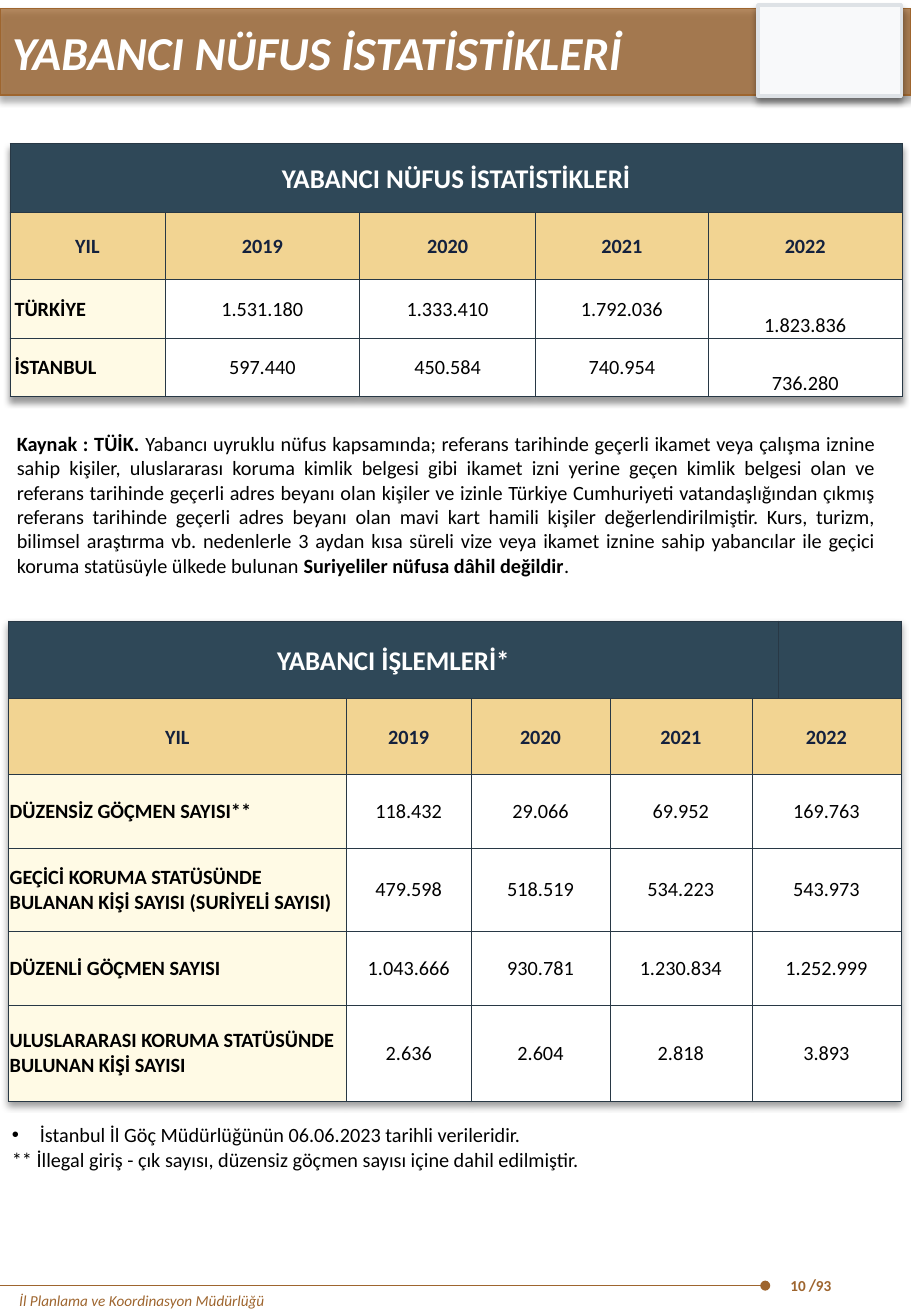
from lxml import etree
from pptx import Presentation, util as u
from pptx.dml.color import RGBColor
from pptx.enum import shapes, text
from pptx.oxml import parse_xml
from pptx.oxml.ns import nsdecls, qn

COLORS = {
    "brown": "9E652E", "navy": "2F4858", "sand": "F2D492", "cream": "FFFAE5",
    "white": "FFFFFF", "black": "000000", "ink": "14213D", "grid": "283845",
    "panel": "F8F9FA", "panel_edge": "DEE2E6",
}
FONT = "Calibri"
PX = u.Inches(1) // 100
ALIGN = {"l": text.PP_ALIGN.LEFT, "c": text.PP_ALIGN.CENTER, "j": text.PP_ALIGN.JUSTIFY}
MIDDLE, BOTTOM = text.MSO_ANCHOR.MIDDLE, text.MSO_ANCHOR.BOTTOM
WIDE_INSET, THIN_INSET = (4, 0, 4, 0), (1, 1, 1, 0)
SHADOW = (
    f'<a:effectLst {nsdecls("a")}><a:outerShdw blurRad="50800" dist="38100" dir="5400000" '
    'algn="t" rotWithShape="0"><a:srgbClr val="000000"><a:alpha val="40000"/></a:srgbClr>'
    '</a:outerShdw></a:effectLst>')


def rgb(name):
    return RGBColor.from_string(COLORS[name])


def write(paragraph, content, size=12, color="black", bold=False, italic=False,
          align="l", spacing=1.0, bullet_indent=None):
    """Fill a paragraph; content is a string or a list of (string, bold) or (string, bold, size)."""
    if bullet_indent:
        props = paragraph._p.get_or_add_pPr()
        props.set("marL", str(bullet_indent * PX))
        props.set("indent", str(-bullet_indent * PX))
        etree.SubElement(props, qn("a:buFont")).set("typeface", "Arial")
        etree.SubElement(props, qn("a:buChar")).set("char", "•")
    paragraph.alignment = ALIGN[align]
    paragraph.line_spacing = spacing
    for words, strong, *own_size in [(content, bold)] if isinstance(content, str) else content:
        run = paragraph.add_run()
        run.text = words
        font = run.font
        font.name, font.size = FONT, u.Pt(own_size[0] if own_size else size)
        font.bold, font.italic = strong, italic
        font.color.rgb = rgb(color)


class Page:
    def __init__(self, deck):
        self.slide = deck.slides.add_slide(deck.slide_layouts[5])
        self.shapes = self.slide.shapes

    def box(self, at, fill, line, line_width, alpha=None):
        box = self.shapes.add_shape(shapes.MSO_SHAPE.RECTANGLE, *(v * PX for v in at))
        box.fill.solid()
        box.fill.fore_color.rgb = rgb(fill)
        if alpha:
            color = box.fill._xPr.find(".//" + qn("a:srgbClr"))
            etree.SubElement(color, qn("a:alpha")).set("val", str(alpha * 1000))
        box.line.color.rgb = rgb(line)
        box.line.width = u.Pt(line_width)
        box._element.spPr.append(parse_xml(SHADOW))

    def rule(self, x1, y1, x2, y2, color):
        rule = self.shapes.add_connector(
            shapes.MSO_CONNECTOR.STRAIGHT, *(v * PX for v in (x1, y1, x2, y2)))
        rule.line.color.rgb = rgb(color)
        rule.line.width = u.Pt(0.5)
        etree.SubElement(rule.line._get_or_add_ln(), qn("a:headEnd")).set("type", "oval")
        etree.SubElement(rule._element.spPr, qn("a:effectLst"))

    def title(self, at, content, **style):
        title = self.shapes.title
        title.left, title.top, title.width, title.height = (v * PX for v in at)
        title.text_frame.auto_size = text.MSO_AUTO_SIZE.NONE
        write(title.text_frame.paragraphs[0], content, **style)
        # Bring the title in front of the banner
        title._element.getparent().append(title._element)

    def text(self, at, *paragraphs, anchor=text.MSO_ANCHOR.TOP):
        """Add a text box; each paragraph is a (content, style) pair."""
        frame = self.shapes.add_textbox(*(v * PX for v in at)).text_frame
        frame.word_wrap = True
        frame.vertical_anchor = anchor
        for index, (content, style) in enumerate(paragraphs):
            paragraph = frame.add_paragraph() if index else frame.paragraphs[0]
            write(paragraph, content, **style)

    def table(self, left, top, widths, heights):
        frame = self.shapes.add_table(
            len(heights), len(widths), left * PX, top * PX, sum(widths) * PX, sum(heights) * PX)
        table = frame.table
        table.first_row = table.horz_banding = False
        table._tbl.tblPr.insert(0, parse_xml(SHADOW))
        for column, width in zip(table.columns, widths):
            column.width = width * PX
        for row, height in zip(table.rows, heights):
            row.height = height * PX
        for r in range(len(heights)):
            for cell in table.rows[r].cells:
                self.paint(cell, ("navy", "sand")[r] if r < 2 else "white")
        return table

    def paint(self, cell, fill):
        cell.fill.solid()
        cell.fill.fore_color.rgb = rgb(fill)
        for index, side in enumerate(("lnL", "lnR", "lnT", "lnB")):
            cell._tc.tcPr.insert(index, parse_xml(
                f'<a:{side} {nsdecls("a")} w="3175"><a:solidFill>'
                f'<a:srgbClr val="{COLORS["grid"]}"/></a:solidFill></a:{side}>'))

    def cell(self, cell, content, inset=WIDE_INSET, anchor=MIDDLE, **style):
        cell.margin_left, cell.margin_top, cell.margin_right, cell.margin_bottom = (
            v * PX for v in inset)
        cell.vertical_anchor = anchor
        write(cell.text_frame.paragraphs[0], content, **style)

    def statistics(self, table, heading, rows, inset, spacing, last_column=None):
        """Write heading, year row and data rows; last_column overrides its data cells' format."""
        table.cell(0, 0).merge(table.cell(0, 4))
        self.cell(table.cell(0, 0), heading, size=16, color="white", bold=True,
                  align="c", spacing=1.07)
        for c, label in enumerate(["YIL", "2019", "2020", "2021", "2022"]):
            self.cell(table.cell(1, c), label, color="ink", bold=True, align="c", spacing=1.07)
        for r, (label, *values) in enumerate(rows, start=2):
            label_cell = table.cell(r, 0)
            label_cell.fill.fore_color.rgb = rgb("cream")
            self.cell(label_cell, label, inset, bold=True, spacing=spacing)
            for c, value in enumerate(values, start=1):
                layout = {"inset": inset, **((last_column or {}) if c == 4 else {})}
                self.cell(table.cell(r, c), value, align="c", spacing=spacing, **layout)


def main():
    deck = Presentation()
    deck.slide_width, deck.slide_height = 750 * PX, 1083 * PX
    page = Page(deck)

    page.box((0, 7, 750, 71), "brown", "brown", 1, alpha=75)
    page.box((624, 4, 118, 75), "panel", "panel_edge", 2)
    page.title((0, 14, 750, 57), "YABANCI NÜFUS İSTATİSTİKLERİ",
               size=28, color="white", bold=True, italic=True)

    population = page.table(8, 118, [128, 160, 145, 142, 160], [57, 55, 48, 48])
    page.statistics(population, "YABANCI NÜFUS İSTATİSTİKLERİ", [
        ("TÜRKİYE", "1.531.180", "1.333.410", "1.792.036", "1.823.836"),
        ("İSTANBUL", "597.440", "450.584", "740.954", "736.280"),
    ], WIDE_INSET, 1.07, last_column={"inset": THIN_INSET, "anchor": BOTTOM})

    page.text((4, 350, 727, 131), ([
        ("Kaynak : TÜİK. ", True),
        ("Yabancı uyruklu nüfus kapsamında; referans tarihinde geçerli ikamet veya çalışma "
         "iznine sahip kişiler, uluslararası koruma kimlik belgesi gibi ikamet izni yerine geçen "
         "kimlik belgesi olan ve referans tarihinde geçerli adres beyanı olan kişiler ve izinle "
         "Türkiye Cumhuriyeti vatandaşlığından çıkmış referans tarihinde geçerli adres beyanı "
         "olan mavi kart hamili kişiler değerlendirilmiştir. Kurs, turizm, bilimsel araştırma vb. "
         "nedenlerle 3 aydan kısa süreli vize veya ikamet iznine sahip yabancılar ile geçici "
         "koruma statüsüyle ülkede bulunan ", False),
        ("Suriyeliler nüfusa dâhil değildir", True),
        (".", False),
    ], {"align": "j"}))

    procedures = page.table(7, 511, [278, 103, 114, 117, 22, 101], [64, 62, 61, 68, 61, 79])
    for r in range(1, 6):
        procedures.cell(r, 4).merge(procedures.cell(r, 5))
    page.statistics(procedures, "YABANCI İŞLEMLERİ*", [
        ("DÜZENSİZ GÖÇMEN SAYISI**", "118.432", "29.066", "69.952", "169.763"),
        ("GEÇİCİ KORUMA STATÜSÜNDE BULANAN KİŞİ SAYISI (SURİYELİ SAYISI)",
         "479.598", "518.519", "534.223", "543.973"),
        ("DÜZENLİ GÖÇMEN SAYISI", "1.043.666", "930.781", "1.230.834", "1.252.999"),
        ("ULUSLARARASI KORUMA STATÜSÜNDE BULUNAN KİŞİ SAYISI",
         "2.636", "2.604", "2.818", "3.893"),
    ], THIN_INSET, 1.0)

    page.text((0, 919, 727, 50),
              ("İstanbul İl Göç Müdürlüğünün 06.06.2023 tarihli verileridir.",
               {"bullet_indent": 23}),
              ("** İllegal giriş - çık sayısı, düzensiz göçmen sayısı içine dahil edilmiştir.", {}))

    page.rule(630, 1058, 0, 1058, "brown")
    page.text((6, 1058, 469, 25), ("İl Planlama ve Koordinasyon Müdürlüğü",
                                   {"size": 9, "color": "brown", "italic": True}))
    page.text((656, 1044, 61, 27), ([("/", True, 10), ("93", True, 9)], {"color": "brown"}))
    page.text((641, 1037, 50, 42), ("10", {"size": 9, "color": "brown", "bold": True}),
              anchor=MIDDLE)
    deck.save("out.pptx")


if __name__ == "__main__":
    main()
